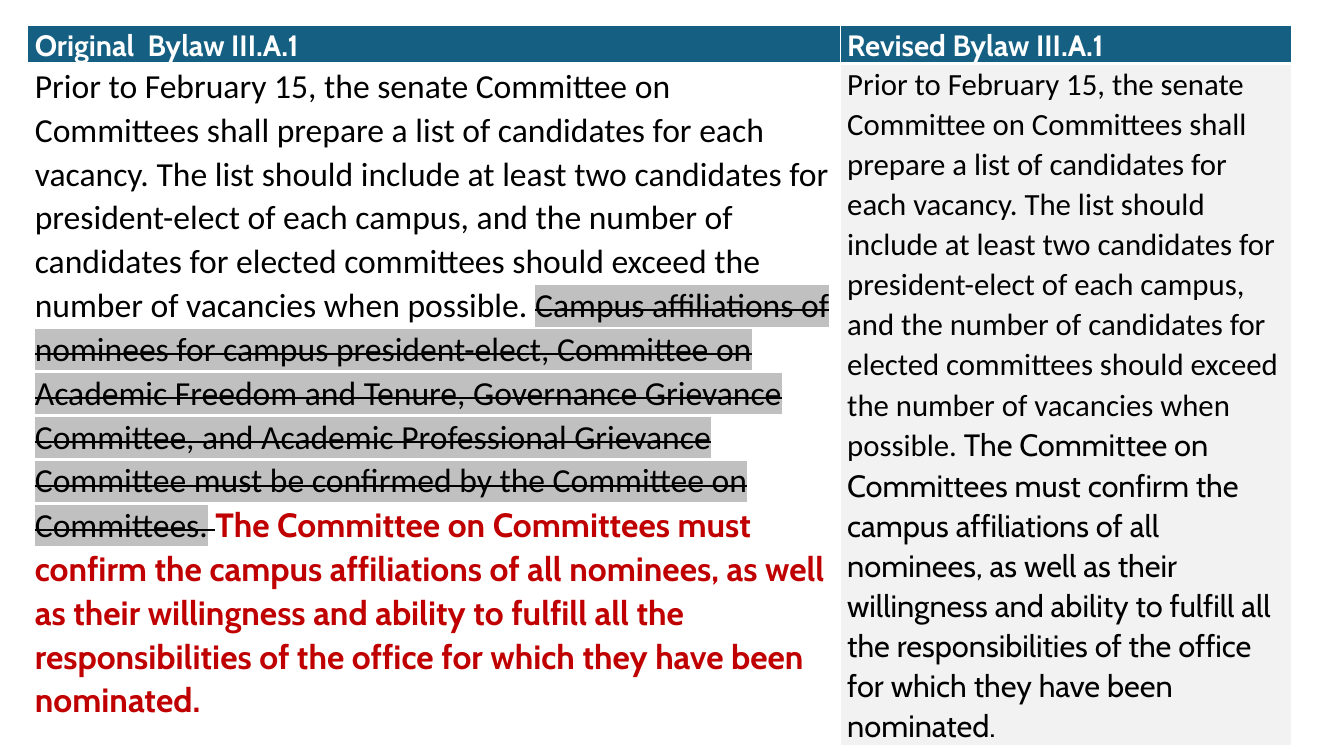
import pptx
import pptx.dml.color
import pptx.oxml
import pptx.oxml.ns
import pptx.util
from lxml import etree

Pt = pptx.util.Pt
qn = pptx.oxml.ns.qn

# Content
COLORS = {"head": "156082", "white": "FFFFFF", "black": "000000",
          "red": "C00000", "gray": "F2F2F2", "mark": "C0C0C0"}
HEADS = ["Original  Bylaw III.A.1", "Revised Bylaw III.A.1"]
KEPT = ("Prior to February 15, the senate Committee on Committees shall prepare "
        "a list of candidates for each vacancy. The list should include at least "
        "two candidates for president-elect of each campus, and the number of "
        "candidates for elected committees should exceed the number of vacancies "
        "when possible. ")
CUT = ("Campus affiliations of nominees for campus president-elect, Committee on "
       "Academic Freedom and Tenure, Governance Grievance Committee, and Academic "
       "Professional Grievance Committee must be confirmed by the Committee on "
       "Committees.")
ADDED = ("The Committee on Committees must confirm the campus affiliations of all "
         "nominees, as well as their willingness and ability to fulfill all the "
         "responsibilities of the office for which they have been nominated.")

# Each body cell: fill, text size, runs with their own format
BODIES = [
    (None, 24, [(KEPT, {}),
                (CUT, {"strike": True, "mark": "mark"}),
                (" ", {"strike": True}),
                (ADDED, {"font": "Cabin", "color": "red", "bold": True})]),
    ("gray", 22, [(KEPT, {}), (ADDED, {"font": "Cabin"})]),
]

# Layout in points
LEFT, TOP = 19.8, 18
WIDTHS = [580.3, 322.5]
HEIGHTS = [26, 479.4]
PAD = 5.1
SPACING = 1.07


def rgb(name):
    return pptx.dml.color.RGBColor.from_string(COLORS[name])


def add_text(para, text, size=24, font="Calibri", color="black", bold=False,
             strike=False, mark=None):
    run = para.add_run()
    run.text = text
    run.font.size = Pt(size)
    run.font.bold = bold
    run.font.color.rgb = rgb(color)
    props = run.font._element
    if strike:
        props.set("strike", "sngStrike")
    if mark:
        light = etree.Element(qn("a:highlight"))
        etree.SubElement(light, qn("a:srgbClr"), val=COLORS[mark])
        props.find(qn("a:solidFill")).addnext(light)
    run.font.name = font


def set_edges(cell, widths):
    props = cell._tc.get_or_add_tcPr()
    for side, width in zip("LRTB", widths):
        line = etree.SubElement(props, qn("a:ln" + side), w=str(int(Pt(width))))
        fill = etree.SubElement(line, qn("a:solidFill"))
        etree.SubElement(fill, qn("a:srgbClr"), val=COLORS["white"])


def fill_cell(cell, fill, edges, size, runs):
    cell.margin_left = cell.margin_right = Pt(PAD)
    cell.margin_top = cell.margin_bottom = 0
    set_edges(cell, edges)
    if fill:
        cell.fill.solid()
        cell.fill.fore_color.rgb = rgb(fill)
    else:
        cell.fill.background()
    para = cell.text_frame.paragraphs[0]
    para.line_spacing = SPACING
    for text, style in runs:
        add_text(para, text, size=size, **style)


# Slide
deck = pptx.Presentation()
deck.slide_width, deck.slide_height = Pt(960), Pt(540)
slide = deck.slides.add_slide(deck.slide_layouts[6])

# Table grid
table = slide.shapes.add_table(2, 2, Pt(LEFT), Pt(TOP), Pt(sum(WIDTHS)),
                               Pt(sum(HEIGHTS))).table
table.first_row = table.horz_banding = False
for col, width in zip(table.columns, WIDTHS):
    col.width = Pt(width)
for row, height in zip(table.rows, HEIGHTS):
    row.height = Pt(height)

# Header and body cells
title = {"font": "Cabin", "color": "white", "bold": True}
for col, (head, (fill, size, runs)) in enumerate(zip(HEADS, BODIES)):
    fill_cell(table.cell(0, col), "head", (1, 1, 1, 3), 21, [(head, title)])
    fill_cell(table.cell(1, col), fill, (1, 1, 3, 1), size, runs)

deck.save("out.pptx")
